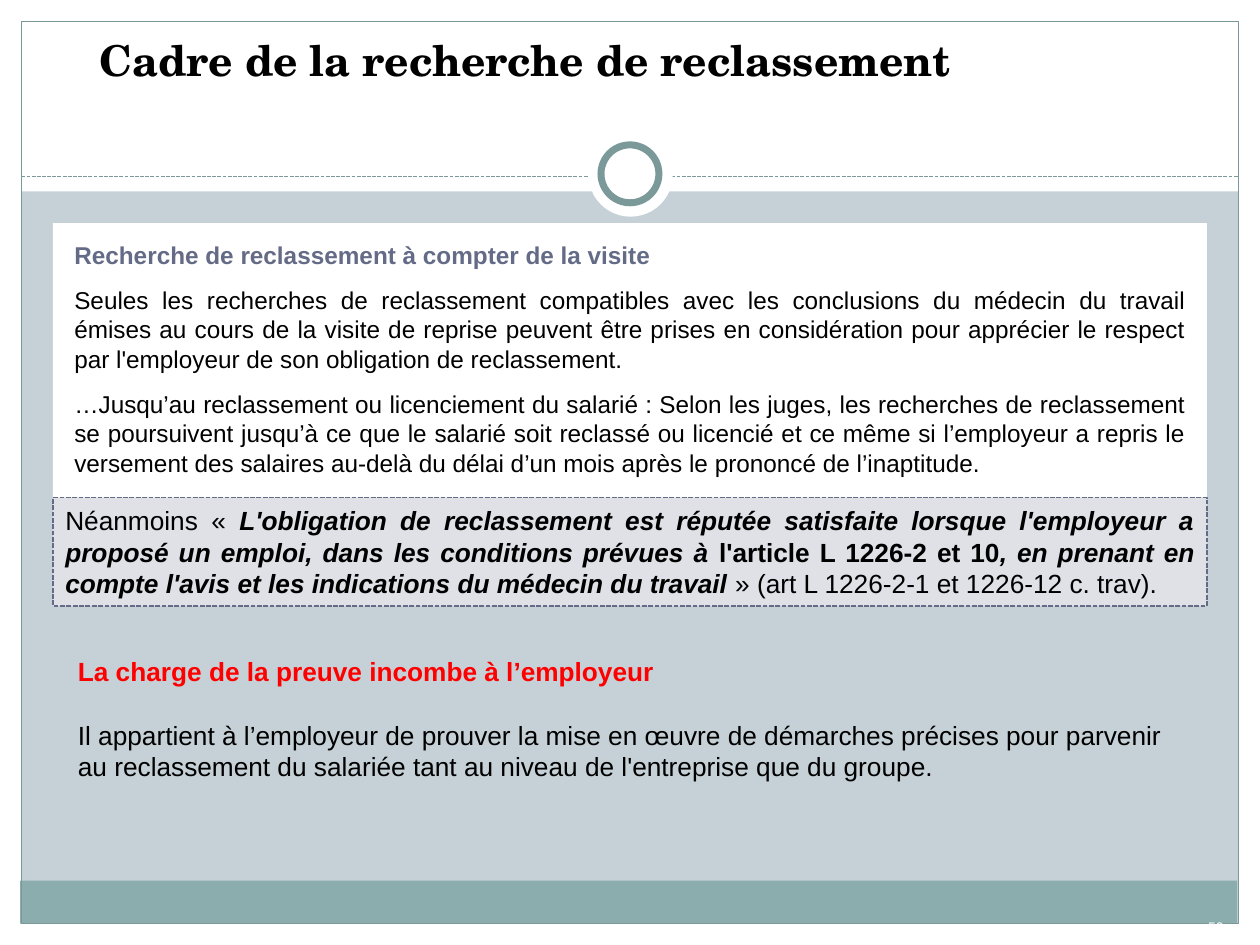
from dataclasses import dataclass
from typing import Optional

import pptx
import pptx.oxml
import pptx.util
from pptx.dml.color import RGBColor
from pptx.enum.dml import MSO_LINE
from pptx.enum.shapes import MSO_CONNECTOR, MSO_SHAPE
from pptx.enum.text import MSO_ANCHOR, PP_ALIGN
from pptx.util import Inches, Pt

WHITE = RGBColor(0xFF, 0xFF, 0xFF)
BLACK = RGBColor(0, 0, 0)
RED = RGBColor(0xFF, 0, 0)
MIST = RGBColor(0xC5, 0xD1, 0xD7)
TEAL = RGBColor(0x8C, 0xAD, 0xAE)
DARK_TEAL = RGBColor(0x7C, 0x99, 0x9A)
SLATE = RGBColor(0x64, 0x6B, 0x86)
PALE_SLATE = RGBColor(0xDF, 0xE1, 0xE7)


@dataclass
class Panel:
    at: tuple
    fill: Optional[RGBColor] = WHITE
    line: Optional[RGBColor] = None
    width: float = 0.75
    dashed: bool = False
    kind: MSO_SHAPE = MSO_SHAPE.RECTANGLE


@dataclass
class Span:
    text: str
    bold: bool = False
    italic: bool = False
    color: RGBColor = BLACK


@dataclass
class Para:
    spans: list
    align: PP_ALIGN = PP_ALIGN.LEFT
    before: float = 0
    spacing: object = 1.0


@dataclass
class Style:
    size: float
    font: str = "Arial"
    insets: tuple = (0.1, 0.05, 0.1, 0.05)  # left, top, right, bottom
    anchor: MSO_ANCHOR = MSO_ANCHOR.TOP


def draw_panel(slide, panel: Panel):
    shape = slide.shapes.add_shape(panel.kind, *map(Inches, panel.at))
    shape.shadow.inherit = False
    if panel.fill is None:
        shape.fill.background()
    else:
        shape.fill.solid()
        shape.fill.fore_color.rgb = panel.fill
    if panel.line is None:
        shape.line.fill.background()
    else:
        shape.line.color.rgb = panel.line
        shape.line.width = Pt(panel.width)
        if panel.dashed:
            shape.line.dash_style = MSO_LINE.SQUARE_DOT
    return shape


def draw_divider(slide, left: float, right: float, y: float) -> None:
    divider = slide.shapes.add_connector(
        MSO_CONNECTOR.STRAIGHT, Inches(left), Inches(y), Inches(right), Inches(y))
    divider.line.color.rgb = DARK_TEAL
    divider.line.width = Pt(0.75)
    divider.line.dash_style = MSO_LINE.SQUARE_DOT
    properties = divider._element.spPr
    properties.append(properties.makeelement(pptx.oxml.ns.qn("a:effectLst"), {}))


def write(box, style: Style, paras: list) -> None:
    frame = box.text_frame
    frame.word_wrap = True
    frame.vertical_anchor = style.anchor
    (frame.margin_left, frame.margin_top,
     frame.margin_right, frame.margin_bottom) = map(Inches, style.insets)
    for index, para in enumerate(paras):
        target = frame.add_paragraph() if index else frame.paragraphs[0]
        target.alignment = para.align
        target.space_before = Pt(para.before)
        target.line_spacing = para.spacing
        for span in para.spans:
            run = target.add_run()
            run.text = span.text
            run.font.name = style.font
            run.font.size = Pt(style.size)
            run.font.bold = span.bold
            run.font.italic = span.italic
            run.font.color.rgb = span.color


def add_text(slide, at: tuple, style: Style, paras: list) -> None:
    write(slide.shapes.add_textbox(*map(Inches, at)), style, paras)


FRAME = [
    Panel((0, 7.33, 10, 0.17)),
    Panel((0, 0, 10, 1.52)),
    Panel((0, 0, 0.17, 7.5)),
    Panel((9.83, 0, 0.17, 7.5)),
    Panel((0.16, 6.99, 9.66, 0.34), fill=TEAL),
    Panel((0.17, 0.17, 9.66, 7.16), fill=None, line=DARK_TEAL),
]
RING = [
    Panel((4.67, 1.05, 0.67, 0.67), kind=MSO_SHAPE.OVAL),
    Panel((4.77, 1.15, 0.46, 0.46), line=DARK_TEAL, width=4, kind=MSO_SHAPE.OVAL),
]
BODY_PITCH = Pt(16.75)
LARGE_PITCH = Pt(18.15)

BODY = [
    Para([Span("Recherche de reclassement à compter de la visite", True, color=SLATE)],
         spacing=0.9),
    Para([Span("Seules les recherches de reclassement compatibles avec les conclusions "
               "du médecin du travail émises au cours de la visite de reprise peuvent "
               "être prises en considération pour apprécier le respect par l'employeur "
               "de son obligation de reclassement.")],
         PP_ALIGN.JUSTIFY, 9, BODY_PITCH),
    Para([Span("…Jusqu’au reclassement ou licenciement du salarié : Selon les juges, les "
               "recherches de reclassement se poursuivent jusqu’à ce que le salarié soit "
               "reclassé ou licencié et ce même si l’employeur a repris le versement des "
               "salaires au-delà du délai d’un mois après le prononcé de l’inaptitude.")],
         PP_ALIGN.JUSTIFY, 9, BODY_PITCH),
]
CALLOUT = [
    Para([Span("Néanmoins « "),
          Span("L'obligation de reclassement est réputée satisfaite lorsque l'employeur "
               "a proposé un emploi, dans les conditions prévues à ", True, True),
          Span("l'article L 1226-2 et 10", True),
          Span(", en prenant en compte l'avis et les indications du médecin du travail",
               True, True),
          Span(" » (art L 1226-2-1 et 1226-12 c. trav).")],
         PP_ALIGN.JUSTIFY, spacing=LARGE_PITCH),
]
PROOF = [
    Para([Span("La charge de la preuve incombe à l’employeur", True, color=RED)],
         spacing=LARGE_PITCH),
    Para([Span("Il appartient à l’employeur de prouver la mise en œuvre de démarches "
               "précises pour parvenir au reclassement du salariée tant au niveau de "
               "l'entreprise que du groupe.")],
         before=18.15, spacing=LARGE_PITCH),
]


def main() -> None:
    deck = pptx.Presentation()
    deck.slide_width, deck.slide_height = Inches(10), Inches(7.5)
    page = deck.slides.add_slide(deck.slide_layouts[6])
    page.background.fill.solid()
    page.background.fill.fore_color.rgb = MIST

    # Page frame, divider and ring
    for panel in FRAME:
        draw_panel(page, panel)
    draw_divider(page, 0.17, 9.83, 1.4)
    for panel in RING:
        draw_panel(page, panel)

    # Title
    add_text(page, (0.69, 0.32, 8.62, 0.79),
             Style(24.3, "TeX Gyre Schola", (0.1, 0.05, 0.1, 0.43), MSO_ANCHOR.BOTTOM),
             [Para([Span("Cadre de la recherche de reclassement", True)], spacing=0.9)])

    # Body panel
    body = draw_panel(page, Panel((0.42, 1.77, 9.16, 2.18)))
    write(body, Style(13.9, insets=(0.17, 0.16, 0.16, 0.16)), BODY)

    # Page number
    add_text(page, (9.39, 7.21, 0.52, 0.29),
             Style(7.9, insets=(0.05,) * 4, anchor=MSO_ANCHOR.MIDDLE),
             [Para([Span("50", color=WHITE)], PP_ALIGN.CENTER)])

    # Legal callout and burden of proof
    callout = draw_panel(page, Panel((0.42, 3.95, 9.16, 0.86), PALE_SLATE, SLATE, 0.9, True))
    write(callout, Style(15), CALLOUT)
    add_text(page, (0.52, 5.15, 9.07, 1.34), Style(15), PROOF)

    deck.save("out.pptx")


if __name__ == "__main__":
    main()
